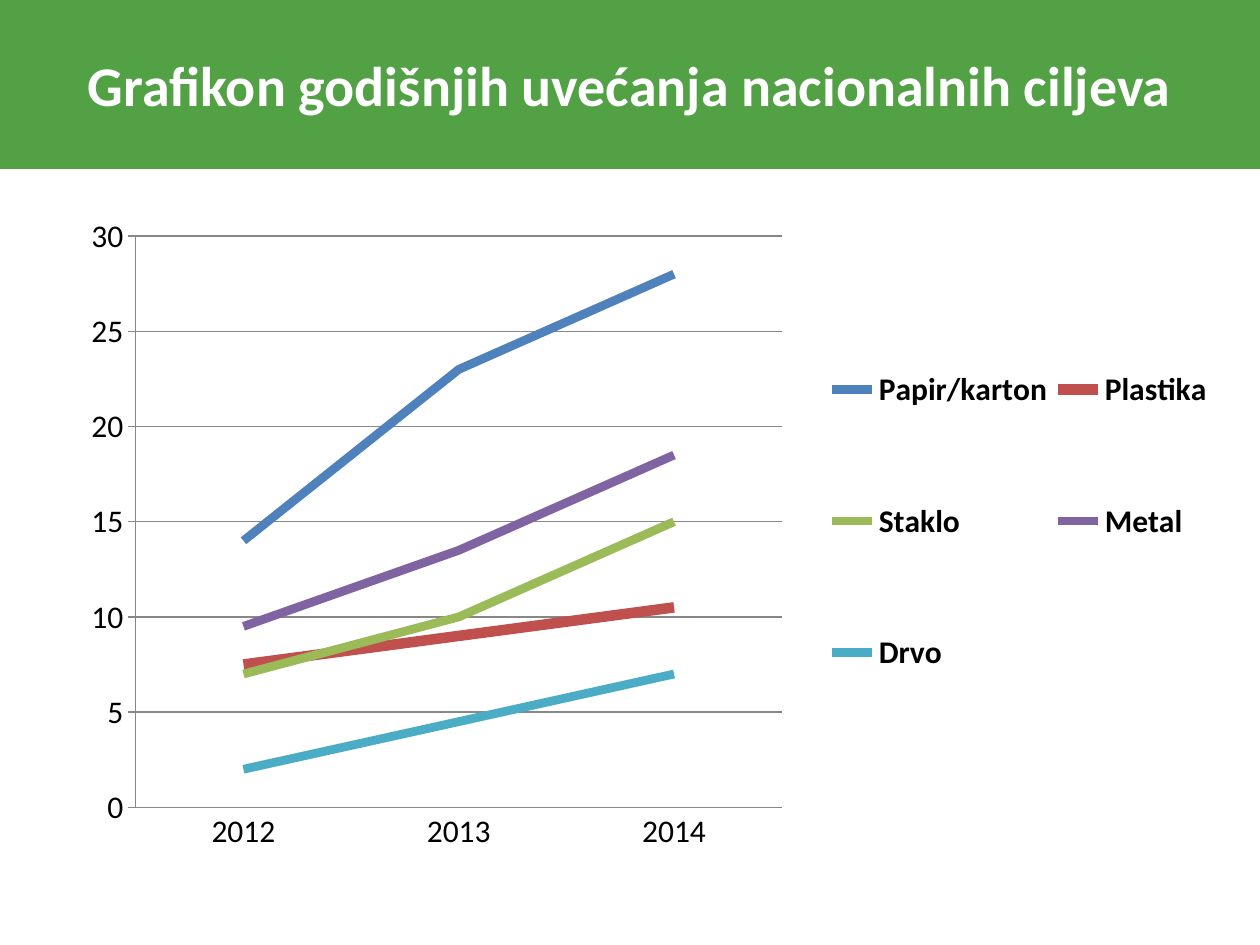
"""Build a slide with a line chart of yearly increases in national targets."""
from dataclasses import dataclass

from lxml.etree import SubElement
from pptx import Presentation
from pptx.chart.chart import Chart
from pptx.chart.data import CategoryChartData
from pptx.dml.color import RGBColor
from pptx.enum.chart import XL_CHART_TYPE, XL_LEGEND_POSITION, XL_MARKER_STYLE, XL_TICK_MARK
from pptx.enum.shapes import MSO_SHAPE
from pptx.enum.text import MSO_ANCHOR, PP_ALIGN
from pptx.oxml import parse_xml
from pptx.oxml.ns import nsdecls, qn
from pptx.slide import Slide
from pptx.util import Inches, Pt


@dataclass(frozen=True)
class Theme:
    font: str = "Calibri"
    green: str = "52A145"
    white: str = "FFFFFF"
    black: str = "000000"
    gray: str = "878787"
    title_size: int = 32
    chart_size: int = 18
    axis_width: float = 0.75


@dataclass(frozen=True)
class Material:
    name: str
    values: tuple[float, ...]
    color: str
    width: int = 5


@dataclass(frozen=True)
class Area:
    x: float
    y: float
    w: float
    h: float


THEME = Theme()
YEARS = ("2012", "2013", "2014")
MATERIALS = (
    Material("Papir/karton", (14, 23, 28), "4F81BD"),
    Material("Plastika", (7.5, 9, 10.5), "C0504D", 6),
    Material("Staklo", (7, 10, 15), "9BBB59"),
    Material("Metal", (9.5, 13.5, 18.5), "8064A2"),
    Material("Drvo", (2, 4.5, 7), "4BACC6"),
)
PLOT_AREA = Area(0.089, 0.029, 0.538, 0.854)
LEGEND_AREA = Area(0.66, 0.09, 0.33, 0.73)


def rgb(value: str) -> RGBColor:
    """Turn a hexadecimal value into a colour."""
    return RGBColor.from_string(value)


def layout_element(area: Area, inner: bool = False):
    """Return a manual chart layout in fractions of the chart."""
    layout = parse_xml(f"<c:layout {nsdecls('c')}><c:manualLayout/></c:layout>")
    settings = {"layoutTarget": "inner"} if inner else {}
    settings |= {"xMode": "edge", "yMode": "edge"}
    settings |= {key: str(getattr(area, key)) for key in ("x", "y", "w", "h")}
    for tag, value in settings.items():
        SubElement(layout[0], qn(f"c:{tag}")).set("val", value)
    return layout


def place_chart_parts(chart: Chart) -> None:
    """Fix the places of the plot and the legend."""
    plot_area = chart._chartSpace.chart.plotArea
    legend = chart.legend._element
    for parent in (plot_area, legend):
        for old in parent.findall(qn("c:layout")):
            parent.remove(old)
    plot_area.insert(0, layout_element(PLOT_AREA, inner=True))
    legend.find(qn("c:legendPos")).addnext(layout_element(LEGEND_AREA))


def style_axes(chart: Chart) -> None:
    """Set the scale, ticks and lines of both axes."""
    value_axis, category_axis = chart.value_axis, chart.category_axis
    value_axis.minimum_scale, value_axis.maximum_scale = 0, 30
    value_axis.major_unit = 5
    value_axis.has_major_gridlines = True
    value_axis.major_tick_mark = XL_TICK_MARK.CROSS
    category_axis.major_tick_mark = XL_TICK_MARK.NONE
    for part in (value_axis, category_axis, value_axis.major_gridlines):
        part.format.line.color.rgb = rgb(THEME.gray)
        part.format.line.width = Pt(THEME.axis_width)


def add_targets_chart(page: Slide) -> None:
    """Add the line chart with one line for each material."""
    data = CategoryChartData()
    data.categories = YEARS
    for material in MATERIALS:
        data.add_series(material.name, material.values)
    chart = page.shapes.add_chart(
        XL_CHART_TYPE.LINE, Inches(0.23), Inches(1.72), Inches(9.53), Inches(5.31), data
    ).chart
    chart.has_title = False
    chart.font.name = THEME.font
    chart.font.size = Pt(THEME.chart_size)
    chart.font.color.rgb = rgb(THEME.black)
    chart.plots[0].vary_by_categories = False
    for series, material in zip(chart.plots[0].series, MATERIALS):
        series.smooth = False
        series.marker.style = XL_MARKER_STYLE.NONE
        series.format.line.color.rgb = rgb(material.color)
        series.format.line.width = Pt(material.width)
    style_axes(chart)
    chart.has_legend = True
    chart.legend.position = XL_LEGEND_POSITION.RIGHT
    chart.legend.include_in_layout = False
    font = chart.legend.font
    font.bold = True
    font.name = THEME.font
    font.size = Pt(THEME.chart_size)
    font.color.rgb = rgb(THEME.black)
    place_chart_parts(chart)


def add_title_band(page: Slide, text: str) -> None:
    """Add the green band that carries the title."""
    band = page.shapes.add_shape(MSO_SHAPE.RECTANGLE, 0, 0, Inches(10), Inches(1.33))
    band.shadow.inherit = False
    band.fill.solid()
    band.fill.fore_color.rgb = rgb(THEME.green)
    band.line.color.rgb = rgb(THEME.green)
    band.line.width = Pt(2)
    band.text_frame.word_wrap = True
    band.text_frame.vertical_anchor = MSO_ANCHOR.MIDDLE
    para = band.text_frame.paragraphs[0]
    para.alignment = PP_ALIGN.CENTER
    span = para.add_run()
    span.text = text
    span.font.name = THEME.font
    span.font.size = Pt(THEME.title_size)
    span.font.bold = True
    span.font.color.rgb = rgb(THEME.white)


def main() -> None:
    """Build and save the deck."""
    deck = Presentation()
    deck.slide_width, deck.slide_height = Inches(10), Inches(7.5)
    page = deck.slides.add_slide(deck.slide_layouts[6])
    add_targets_chart(page)
    add_title_band(page, "Grafikon godišnjih uvećanja nacionalnih ciljeva")
    deck.save("out.pptx")


if __name__ == "__main__":
    main()
